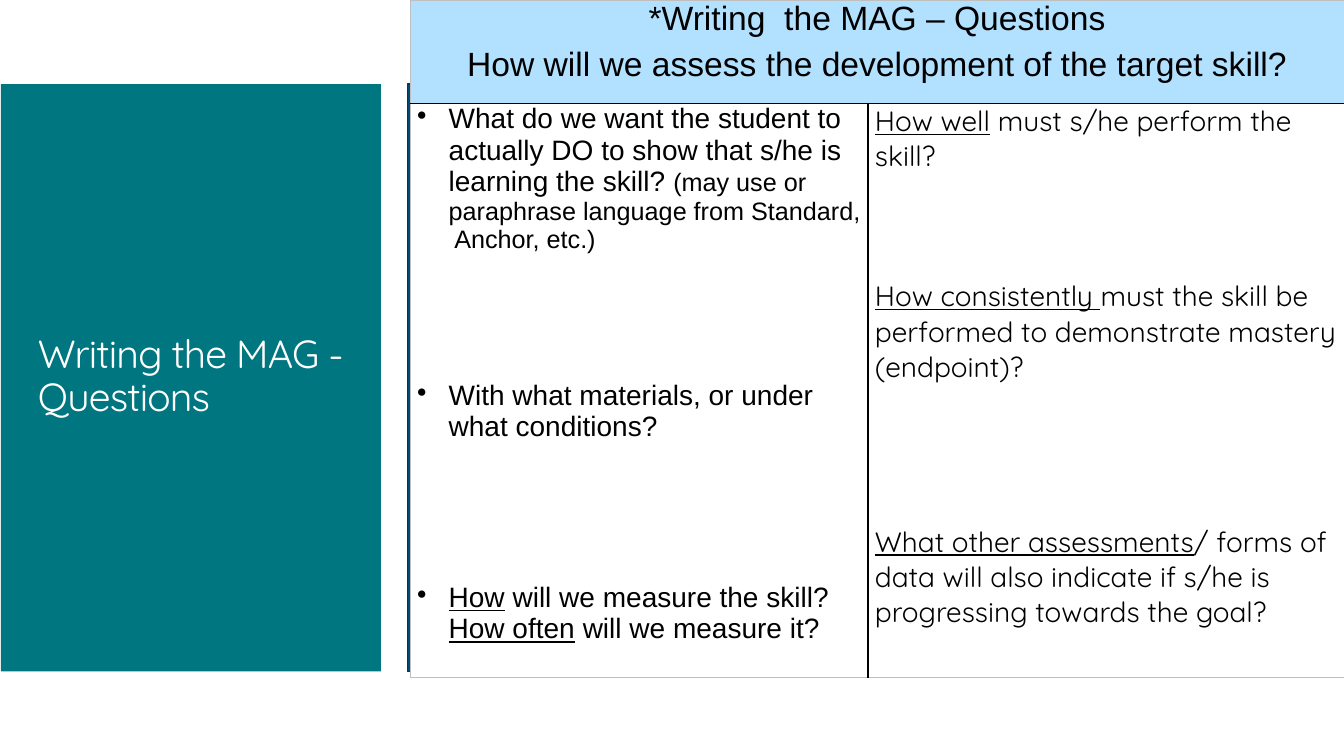
import pptx
import pptx.util
import pptx.dml.color
import pptx.enum.shapes
import pptx.enum.text
import lxml.etree

Pt = pptx.util.Pt
RGB = pptx.dml.color.RGBColor.from_string
ALIGN = pptx.enum.text.PP_ALIGN
COLORS = {"navy": "004976", "navy_line": "003657", "teal": "007681", "header": "B1E1FF",
          "white": "FFFFFF", "black": "000000", "grey": "BFBFBF"}
NS = "http://schemas.openxmlformats.org/drawingml/2006/main"


def set_border(cell, side, color, width):
    tcPr = cell._tc.get_or_add_tcPr()
    ln = lxml.etree.Element(f"{{{NS}}}ln{side}", w=str(Pt(width)))
    fill = lxml.etree.SubElement(ln, f"{{{NS}}}solidFill")
    lxml.etree.SubElement(fill, f"{{{NS}}}srgbClr", val=COLORS[color])
    # Borders come before the fill, in the order L, R, T, B
    tcPr.insert(sum(child.tag.startswith(f"{{{NS}}}ln") for child in tcPr), ln)


def add_paragraph(tf, index, runs, font, size, before=0):
    p = tf.paragraphs[0] if index == 0 else tf.add_paragraph()
    p.space_before = Pt(before)
    p.font.name = font
    p.font.size = Pt(size)
    p.font.color.rgb = RGB(COLORS["black"])
    for text, underline, run_size in runs:
        r = p.add_run()
        r.text = text
        r.font.name = font
        r.font.size = Pt(run_size)
        r.font.underline = underline
        r.font.color.rgb = RGB(COLORS["black"])
    return p


prs = pptx.Presentation()
prs.slide_width, prs.slide_height = Pt(960), Pt(540)
s = prs.slides.add_slide(prs.slide_layouts[6])

# Background panels
for left, width, color, line in [(291, 619, "navy", "navy_line"), (0.7, 271.3, "teal", None)]:
    sp = s.shapes.add_shape(pptx.enum.shapes.MSO_SHAPE.RECTANGLE,
                            Pt(left), Pt(60), Pt(width), Pt(419.5))
    sp.shadow.inherit = False
    sp.fill.solid()
    sp.fill.fore_color.rgb = RGB(COLORS[color])
    if line:
        sp.line.color.rgb = RGB(COLORS[line])
        sp.line.width = Pt(0.85)
    else:
        sp.line.fill.background()

# Title
tf = s.shapes.add_textbox(Pt(20), Pt(88.5), Pt(232), Pt(362)).text_frame
tf.word_wrap = True
tf.vertical_anchor = pptx.enum.text.MSO_ANCHOR.MIDDLE
p = tf.paragraphs[0]
p.line_spacing = 0.9
r = p.add_run()
r.text = "Writing the MAG - Questions"
r.font.name = "Quicksand"
r.font.size = Pt(28)
r.font.color.rgb = RGB(COLORS["white"])
r._r.get_or_add_rPr().set("spc", "-60")

# Table
table = s.shapes.add_table(2, 2, Pt(293), 0, Pt(667), Pt(484)).table
table.first_row = table.horz_banding = False
for column, width in zip(table.columns, (327, 340)):
    column.width = Pt(width)
for row, height in zip(table.rows, (74, 410)):
    row.height = Pt(height)
table.cell(0, 0).merge(table.cell(0, 1))

for row in range(2):
    for col in range(2):
        cell = table.cell(row, col)
        cell.margin_left = cell.margin_right = Pt(5)
        cell.margin_top = cell.margin_bottom = 0
        cell.fill.solid()
        cell.fill.fore_color.rgb = RGB(COLORS["white" if row else "header"])
        inner = {"L": row and col, "R": row and not col, "T": row, "B": not row}
        for side in "LRTB":
            width = 1 if side in "LR" else 1.5
            set_border(cell, side, *(("black", width) if inner[side] else ("grey", 0.5)))

# Header row
header = ["*Writing  the MAG – Questions",
          "How will we assess the development of the target skill?"]
for i, text in enumerate(header):
    p = add_paragraph(table.cell(0, 0).text_frame, i, [(text, False, 24)], "Arial", 24)
    p.alignment = ALIGN.CENTER
    p.space_after = Pt(6)

# Left column: bulleted questions, each with the space above it
questions = [
    (0, [("What do we want the student to actually DO to show that s/he is learning the skill? ",
          False, 20),
         ("(may use or paraphrase language from Standard,  Anchor, etc.)", False, 18)]),
    (90, [("With what materials, or under what conditions?", False, 20)]),
    (100, [("How", True, 20), (" will we measure the skill? ", False, 20),
           ("How often", True, 20), (" will we measure it?", False, 20)]),
]
for i, (before, runs) in enumerate(questions):
    p = add_paragraph(table.cell(1, 0).text_frame, i, runs, "Arial", 20, before)
    pPr = p._p.get_or_add_pPr()
    pPr.set("marL", str(Pt(22.5)))
    pPr.set("indent", str(Pt(-22.5)))
    bullet = lxml.etree.Element(f"{{{NS}}}buChar", char="•")
    pPr.insert(list(pPr).index(pPr.find(f"{{{NS}}}defRPr")), bullet)

# Right column: criteria with an underlined opening
criteria = [
    (0, "How well", " must s/he perform the skill?"),
    (75, "How consistently ", "must the skill be performed to demonstrate mastery (endpoint)?"),
    (100, "What other assessments",
     "/ forms of data will also indicate if s/he is progressing towards the goal?"),
]
for i, (before, lead, rest) in enumerate(criteria):
    add_paragraph(table.cell(1, 1).text_frame, i, [(lead, True, 20), (rest, False, 20)],
                  "Quicksand", 20, before)

prs.save("out.pptx")
